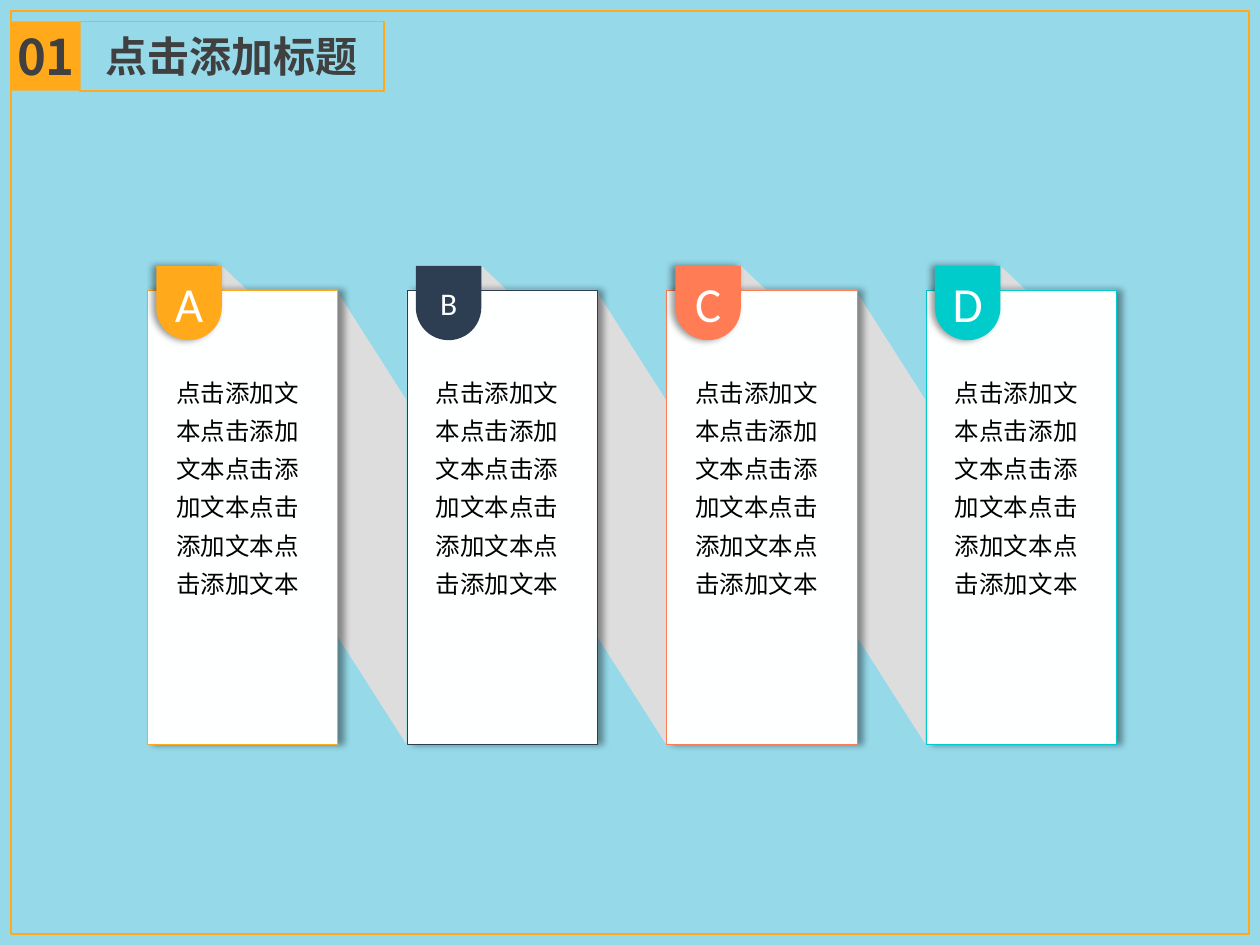
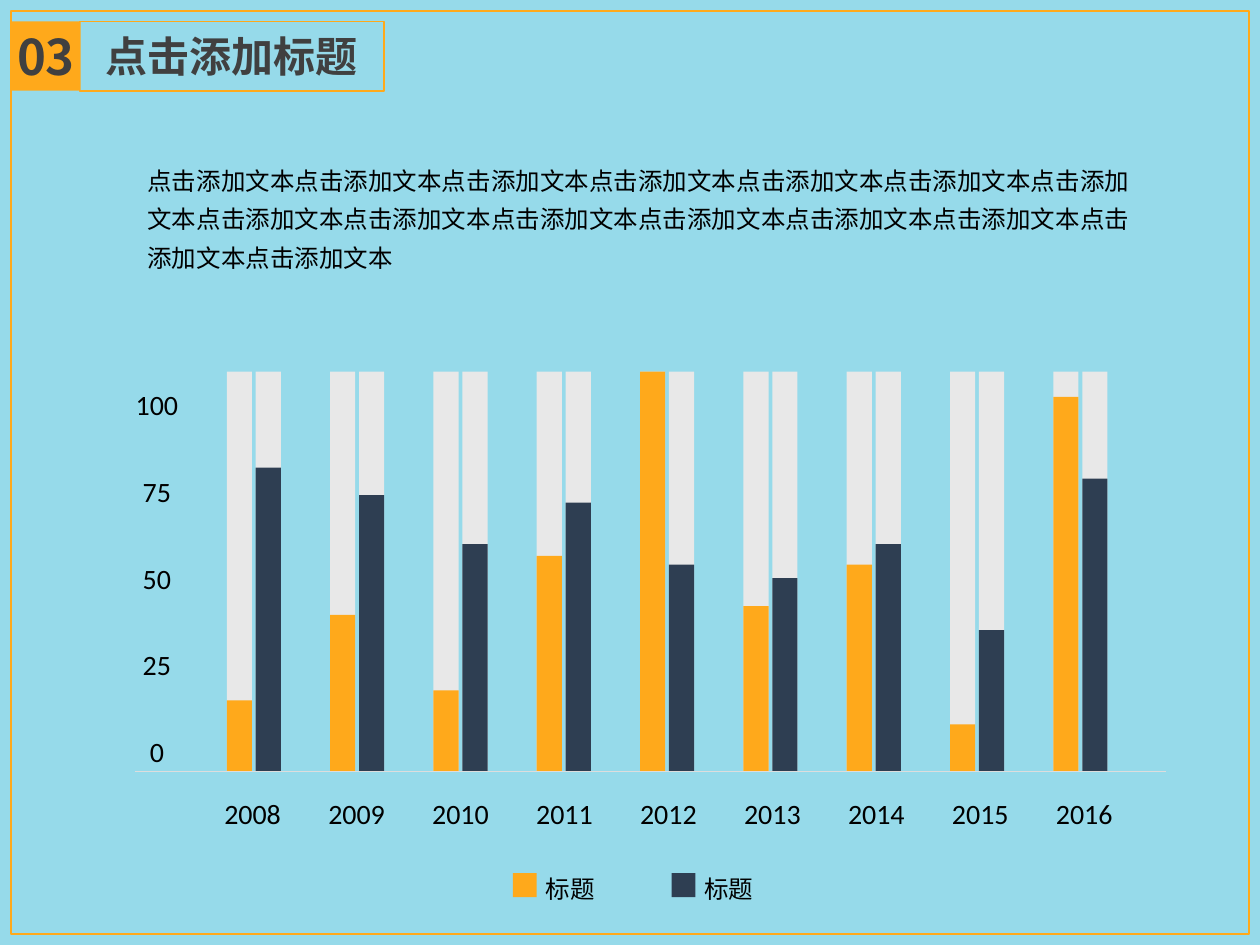
import pptx
import pptx.dml.color
import pptx.enum.shapes
import pptx.enum.text
import pptx.oxml
import pptx.oxml.ns
import pptx.util

Inches = pptx.util.Inches
Pt = pptx.util.Pt
SHAPE = pptx.enum.shapes.MSO_SHAPE
ALIGN = pptx.enum.text.PP_ALIGN
ANCHOR = pptx.enum.text.MSO_ANCHOR
AUTO_SIZE = pptx.enum.text.MSO_AUTO_SIZE

SKY, ORANGE, NAVY, CORAL, TEAL = "96DAEA", "FFA91B", "2E3E52", "FF7C55", "00CCCC"
PAPER, RIBBON, TRACK, HEADING, BLACK = "FEFFFF", "DDDDDD", "E8E8E8", "404040", "000000"
CJK, LATIN = "Noto Sans CJK SC", "Calibri"
SAMPLE = "点击添加文本"

CARDS = [("A", ORANGE, 28), ("B", NAVY, 18), ("C", CORAL, 28), ("D", TEAL, 28)]
CARD_PITCH = 2.06

YEARS = range(2008, 2017)
# Share of the full track height, in percent
ORANGE_SHARES = [17.7, 39.1, 20.2, 53.9, 100, 41.3, 51.7, 11.7, 93.7]
NAVY_SHARES = [76, 69.1, 56.8, 67.2, 51.7, 48.3, 56.8, 35.3, 73.2]
BASELINE, TRACK_HEIGHT, BAR_WIDTH = 6.12, 3.17, 0.2


def rgb(color):
    return pptx.dml.color.RGBColor.from_string(color)


def box(left, top, width, height):
    return [Inches(length) for length in (left, top, width, height)]


def place(shape, bounds):
    shape.left, shape.top, shape.width, shape.height = box(*bounds)


def outline(shape, color, width):
    shape.line.color.rgb = rgb(color)
    shape.line.width = Pt(width)


def add_block(slide, kind, bounds, fill=None, line=None, line_width=1):
    block = slide.shapes.add_shape(kind, *box(*bounds))
    block.shadow.inherit = False
    if fill:
        block.fill.solid()
        block.fill.fore_color.rgb = rgb(fill)
    else:
        block.fill.background()
    if line:
        outline(block, line, line_width)
    else:
        block.line.fill.background()
    return block


def cast_shadow(shape, distance, direction):
    effects = shape._element.spPr.find(pptx.oxml.ns.qn("a:effectLst"))
    effects.append(pptx.oxml.parse_xml(
        f'<a:outerShdw {pptx.oxml.ns.nsdecls("a")} blurRad="{Pt(4)}" dist="{Pt(distance)}" '
        f'dir="{direction * 60000}" algn="ctr" rotWithShape="0">'
        f'<a:srgbClr val="{BLACK}"><a:alpha val="40000"/></a:srgbClr></a:outerShdw>'))


def write(shape, text, size, color=BLACK, font=CJK, bold=False, align=ALIGN.CENTER,
          anchor=ANCHOR.MIDDLE, spacing=1.0, margin=None, wrap=True):
    frame = shape.text_frame
    frame.word_wrap = wrap
    frame.auto_size = AUTO_SIZE.NONE
    frame.vertical_anchor = anchor
    if margin is not None:
        frame.margin_left = frame.margin_right = Inches(margin)
        frame.margin_top = frame.margin_bottom = Inches(margin)
    paragraph = frame.paragraphs[0]
    paragraph.alignment = align
    paragraph.line_spacing = spacing
    paragraph.space_before = Pt(0)
    run = paragraph.add_run()
    run.text = text
    run.font.name = font
    run.font.size = Pt(size)
    run.font.bold = bold
    run.font.color.rgb = rgb(color)
    east_asian = pptx.oxml.parse_xml(
        f'<a:ea {pptx.oxml.ns.nsdecls("a")} typeface="{CJK}"/>')
    run.font._element.find(pptx.oxml.ns.qn("a:latin")).addnext(east_asian)


def write_body(shape, text):
    write(shape, text, 14, align=ALIGN.LEFT, anchor=ANCHOR.TOP, spacing=1.3)
    shape.text_frame.auto_size = AUTO_SIZE.SHAPE_TO_FIT_TEXT


def add_label(slide, bounds, text, size=16, align=ALIGN.CENTER, anchor=ANCHOR.TOP):
    label = slide.shapes.add_textbox(*box(*bounds))
    write(label, text, size, font=LATIN, align=align, anchor=anchor, spacing=1.5, margin=0)


def add_section_slide(deck, layout, number):
    """Add a slide with the frame, the section number and the title."""
    slide = deck.slides.add_slide(deck.slide_layouts[layout])
    add_block(slide, SHAPE.RECTANGLE, (0.09, 0.09, 9.82, 7.32), line=ORANGE)
    badge = add_block(slide, SHAPE.RECTANGLE, (0.09, 0.17, 0.55, 0.55), ORANGE)
    write(badge, number, 28, HEADING, bold=True, margin=0)
    title = slide.shapes.title
    place(title, (0.63, 0.17, 2.42, 0.55))
    outline(title, ORANGE, 1)
    write(title, "点击添加标题", 24, HEADING, bold=True)
    return slide


def add_ribbon(slide, left):
    """Add the slanted band that links a card to the next one."""
    ribbon = add_block(slide, SHAPE.PARALLELOGRAM, (left - 0.03, 3.82, 3.61, 0.56), RIBBON)
    ribbon.adjustments[0] = 1.567
    ribbon.rotation = 270


def add_card(slide, left, letter, color, letter_size):
    add_block(slide, SHAPE.RIGHT_TRIANGLE, (left + 0.59, 2.11, 0.2, 0.19), RIBBON)
    card = add_block(slide, SHAPE.RECTANGLE, (left, 2.3, 1.51, 3.61), PAPER, color, 0.25)
    cast_shadow(card, 3, 0)
    tab = add_block(slide, SHAPE.ROUND_2_SAME_RECTANGLE, (left + 0.07, 2.11, 0.52, 0.59), color)
    tab.adjustments[0], tab.adjustments[1] = 0, 0.5
    write(tab, letter, letter_size, PAPER, LATIN, margin=0, wrap=False)
    tab.text_frame.margin_top = Inches(0.08)
    if color != NAVY:
        cast_shadow(tab, 2, 180)
    words = slide.shapes.add_textbox(*box(left + 0.13, 2.88, 1.25, 1.9))
    write_body(words, SAMPLE * 5)


def add_bar(slide, left, share, color):
    """Add a full-height track and the bar that fills a share of it."""
    for part, fill in ((100, TRACK), (share, color)):
        height = TRACK_HEIGHT * part / 100
        add_block(slide, SHAPE.RECTANGLE, (left, BASELINE - height, BAR_WIDTH, height), fill)


def add_legend_entry(slide, left, color):
    add_block(slide, SHAPE.RECTANGLE, (left, 6.93, 0.19, 0.19), color)
    add_label(slide, (left + 0.26, 6.84, 0.97, 0.31), "标题", 14, ALIGN.LEFT, ANCHOR.MIDDLE)


def add_baseline(slide):
    baseline = slide.shapes.add_connector(
        pptx.enum.shapes.MSO_CONNECTOR.STRAIGHT,
        Inches(1.07), Inches(BASELINE), Inches(9.25), Inches(BASELINE))
    outline(baseline, RIBBON, 0.5)
    baseline._element.spPr.append(
        pptx.oxml.parse_xml(f'<a:effectLst {pptx.oxml.ns.nsdecls("a")}/>'))


def build_cards_slide(deck):
    slide = add_section_slide(deck, 5, "01")
    for index, (letter, color, letter_size) in enumerate(CARDS):
        left = 1.17 + index * CARD_PITCH
        if index < len(CARDS) - 1:
            add_ribbon(slide, left)
        add_card(slide, left, letter, color, letter_size)


def build_years_slide(deck):
    slide = add_section_slide(deck, 1, "03")
    intro = slide.placeholders[1]
    place(intro, (1.07, 1.2, 8.15, 0.98))
    write_body(intro, SAMPLE * 15)
    properties = intro.text_frame.paragraphs[0]._p.get_or_add_pPr()
    properties.set("marL", "0")
    properties.set("indent", "0")
    properties.append(pptx.oxml.parse_xml(f'<a:buNone {pptx.oxml.ns.nsdecls("a")}/>'))

    for index, (year, orange, navy) in enumerate(zip(YEARS, ORANGE_SHARES, NAVY_SHARES)):
        left = 1.8 + index * 0.82
        add_bar(slide, left, orange, ORANGE)
        add_bar(slide, left + 0.23, navy, NAVY)
        add_label(slide, (1.56 + index * 6.6 / 8, 6.19, 0.89, 0.43), str(year))
    for step in range(5):
        add_label(slide, (0.8, 5.7 - step * 0.69, 0.89, 0.43), str(step * 25))
    add_legend_entry(slide, 4.07, ORANGE)
    add_legend_entry(slide, 5.33, NAVY)
    add_baseline(slide)


def main():
    deck = pptx.Presentation()
    deck.slide_width, deck.slide_height = Inches(10), Inches(7.5)
    backdrop = deck.slide_master.background.fill
    backdrop.solid()
    backdrop.fore_color.rgb = rgb(SKY)
    build_cards_slide(deck)
    build_years_slide(deck)
    deck.save("out.pptx")


if __name__ == "__main__":
    main()
